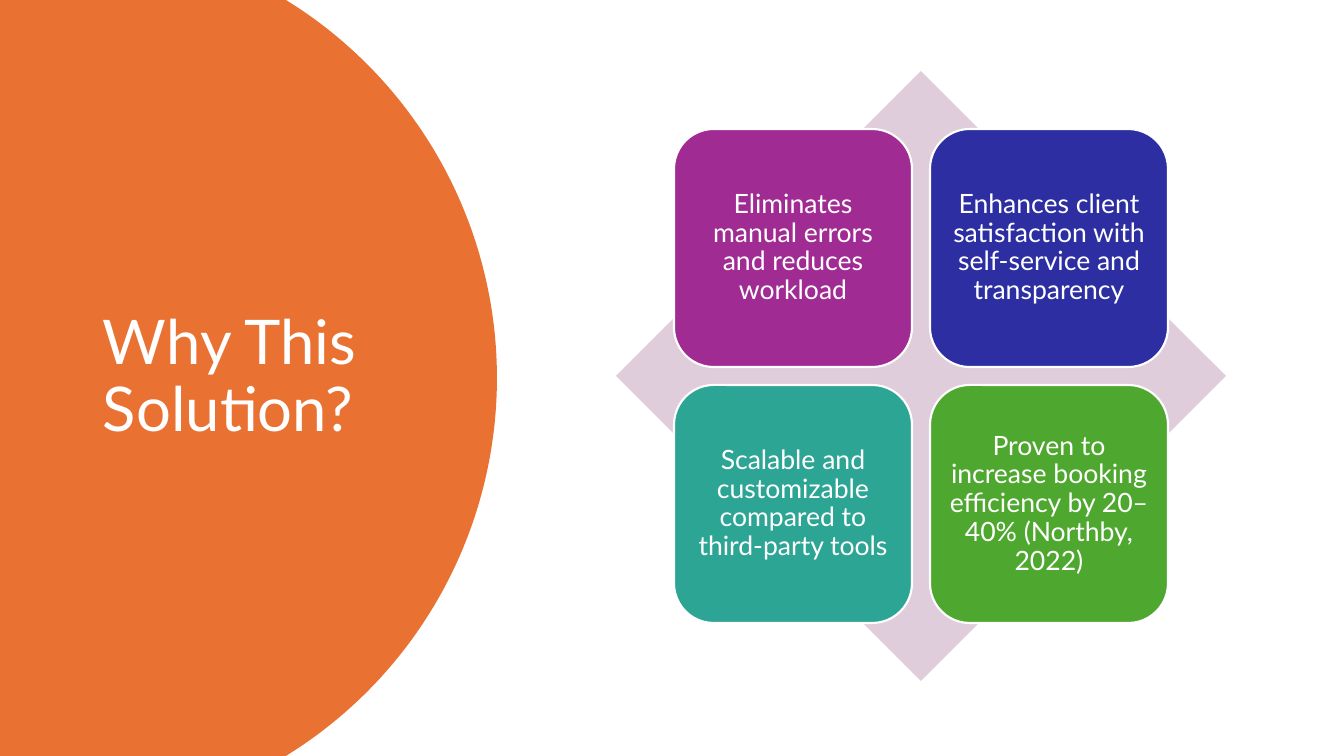
from math import asin, cos, sin

from pptx import Presentation
from pptx.dml.color import RGBColor
from pptx.enum.shapes import MSO_SHAPE
from pptx.enum.text import MSO_ANCHOR, MSO_AUTO_SIZE, PP_ALIGN
from pptx.util import Emu, Pt

PX = 914400 / 100.8
WIDTH, HEIGHT = 1344, 756


def paint(color_format, color):
    color_format.rgb = RGBColor.from_string(color)


def write(shape, text, size, align, margin):
    frame = shape.text_frame
    frame.text = text
    frame_format = {
        "word_wrap": True,
        "auto_size": MSO_AUTO_SIZE.NONE,
        "vertical_anchor": MSO_ANCHOR.MIDDLE,
        "margin_left": Emu(round(margin * PX)),
        "margin_right": Emu(round(margin * PX)),
        "margin_top": Emu(round(margin * PX)),
        "margin_bottom": Emu(round(margin * PX)),
    }
    for name, value in frame_format.items():
        setattr(frame, name, value)
    para = frame.paragraphs[0]
    for name, value in {"alignment": align, "line_spacing": 0.9}.items():
        setattr(para, name, value)
    span = para.runs[0]
    for name, value in {"name": "Lato", "size": Pt(size)}.items():
        setattr(span.font, name, value)
    paint(span.font.color, "FFFFFF")


deck = Presentation()
deck.slide_width = Emu(round(WIDTH * PX))
deck.slide_height = Emu(round(HEIGHT * PX))
page = deck.slides.add_slide(deck.slide_layouts[5])

radius, center_x, center_y = 444, 53, HEIGHT / 2
half_angle = asin(center_y / radius)
steps = 120
angles = [half_angle * (2 * step / steps - 1) for step in range(steps + 1)]
arc = [
    (round((center_x + radius * cos(angle)) * PX), round((center_y + radius * sin(angle)) * PX))
    for angle in angles
]
outline = page.shapes.build_freeform(0, 0)
outline.add_line_segments(arc + [(0, round(HEIGHT * PX))], close=True)
panel = outline.convert_to_shape()
panel.shadow.inherit = False
panel.fill.solid()
paint(panel.fill.fore_color, "E97132")
panel.line.fill.background()

title = page.shapes.title
title_place = {"left": 93, "top": 71, "width": 326, "height": 614}
for name, value in title_place.items():
    setattr(title, name, Emu(round(value * PX)))
write(title, "Why This Solution?", 44, PP_ALIGN.LEFT, 10)
page.shapes._spTree.remove(title._element)
page.shapes._spTree.append(title._element)

diamond_place = [Emu(round(value * PX)) for value in (616, 71, 610, 610)]
diamond = page.shapes.add_shape(MSO_SHAPE.DIAMOND, *diamond_place)
diamond.shadow.inherit = False
diamond.fill.solid()
paint(diamond.fill.fore_color, "DFCDDC")
diamond.line.fill.background()

reasons = [
    ("Eliminates manual errors and reduces workload", "A02B93"),
    ("Enhances client satisfaction with self-service and transparency", "2C2EA2"),
    ("Scalable and customizable compared to third-party tools", "2DA594"),
    ("Proven to increase booking efficiency by 20–40% (Northby, 2022)", "4EA72E"),
]
box_side, box_pitch = 238, 256
for index, (reason, color) in enumerate(reasons):
    row, column = divmod(index, 2)
    left, top = 674 + column * box_pitch, 129 + row * box_pitch
    box_place = [Emu(round(value * PX)) for value in (left, top, box_side, box_side)]
    box = page.shapes.add_shape(MSO_SHAPE.ROUNDED_RECTANGLE, *box_place)
    box.shadow.inherit = False
    box.fill.solid()
    paint(box.fill.fore_color, color)
    paint(box.line.color, "FFFFFF")
    box.line.width = Pt(1.5)
    write(box, reason, 19, PP_ALIGN.CENTER, 8)

deck.save("out.pptx")
